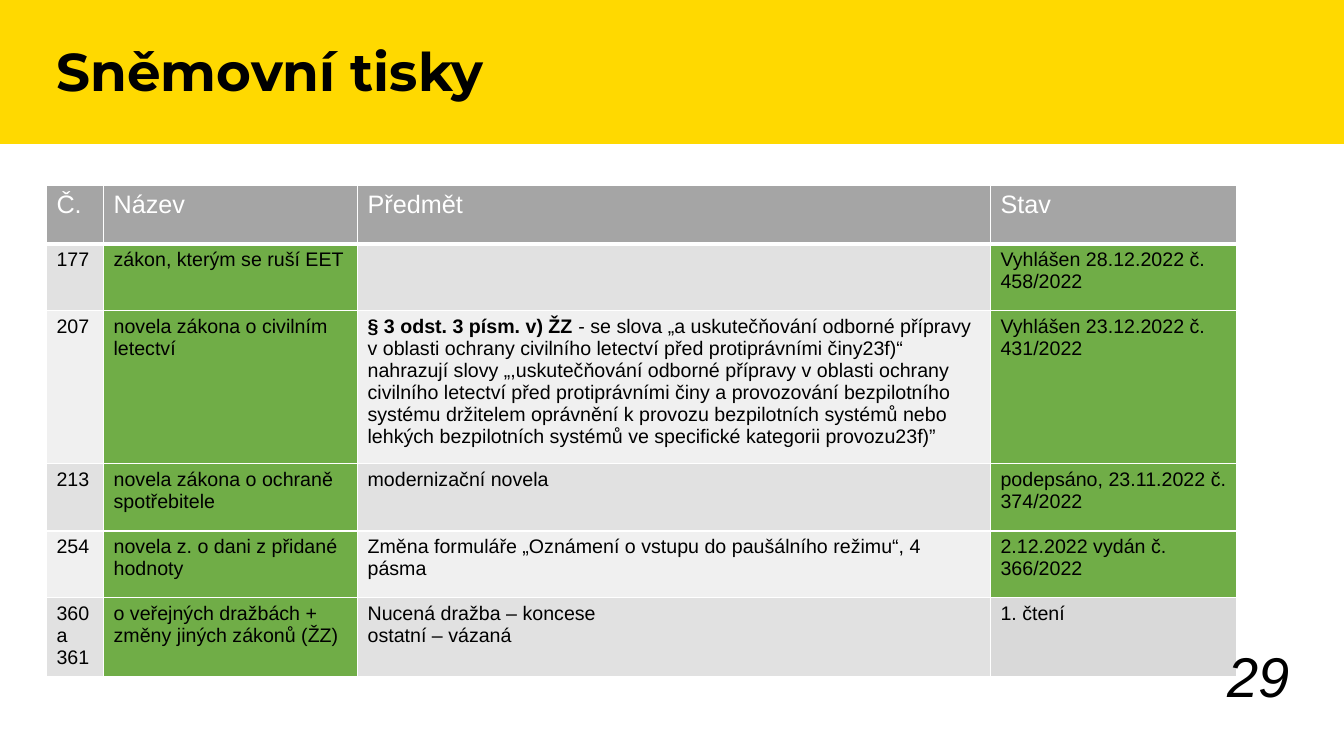
import lxml.etree
import pptx
import pptx.dml.color
import pptx.enum.shapes
import pptx.enum.text
import pptx.oxml.ns
import pptx.util
from pptx.util import Cm

ALIGN = pptx.enum.text.PP_ALIGN
ANCHOR = pptx.enum.text.MSO_ANCHOR

YELLOW, WHITE, BLACK = "FFD900", "FFFFFF", "000000"
HEADER, GREEN, GRAY = "A5A5A5", "70AD47", "D9D9D9"
BANDS = ("E1E1E1", "F0F0F0")

COLUMN_WIDTHS = (1.44, 6.4, 15.95, 6.2)
ROW_HEIGHTS = (1.47, 1.68, 3.86, 1.7, 1.68, 1.98)
# A newline starts a paragraph; text between ** is bold.
BILLS = (
    ("Č.", "Název", "Předmět", "Stav"),
    ("177", "zákon, kterým se ruší EET", "", "Vyhlášen 28.12.2022 č. 458/2022"),
    ("207", "novela zákona o civilním letectví",
     "**§ 3 odst. 3 písm. v) ŽZ **- se slova „a uskutečňování odborné přípravy "
     "v oblasti ochrany civilního letectví před protiprávními činy23f)“ "
     "nahrazují slovy „,uskutečňování odborné přípravy v oblasti ochrany "
     "civilního letectví před protiprávními činy a provozování bezpilotního "
     "systému držitelem oprávnění k provozu bezpilotních systémů nebo "
     "lehkých bezpilotních systémů ve specifické kategorii provozu23f)”",
     "Vyhlášen 23.12.2022 č. 431/2022"),
    ("213", "novela zákona o ochraně spotřebitele", "modernizační novela",
     "podepsáno, 23.11.2022 č. 374/2022"),
    ("254", "novela z. o dani z přidané hodnoty",
     "Změna formuláře „Oznámení o vstupu do paušálního režimu“, 4 pásma",
     "2.12.2022 vydán č. 366/2022"),
    ("360 a 361", "o veřejných dražbách + změny jiných zákonů (ŽZ)",
     "Nucená dražba – koncese\nostatní – vázaná", "1. čtení"),
)


def color(value):
    return pptx.dml.color.RGBColor.from_string(value)


def assign(target, values):
    for name, value in values.items():
        setattr(target, name, value)


def paint(fill, value):
    fill.solid()
    fill.fore_color.rgb = color(value)


def cell_fill(row, column):
    if row == 0:
        return HEADER
    if column == 1:
        return GREEN
    if column == 3:
        return GRAY if row == len(BILLS) - 1 else GREEN
    return BANDS[(row - 1) % 2]


class SlideBuilder:
    def __init__(self, deck, font="Arial"):
        self.font = font
        self.slide = deck.slides.add_slide(deck.slide_layouts[5])

    def set_text(self, frame, text, size, ink=BLACK, paragraph=None, **font):
        """Fill a text frame, turning **marked** parts bold."""
        for index, line in enumerate(text.split("\n")):
            para = frame.add_paragraph() if index else frame.paragraphs[0]
            assign(para, paragraph or {})
            for part, words in enumerate(line.split("**")):
                if words:
                    span = para.add_run()
                    span.text = words
                    style = {"name": self.font, "bold": part % 2 == 1,
                             "size": pptx.util.Pt(size)}
                    assign(span.font, style | font)
                    span.font.color.rgb = color(ink)

    def title(self, text, left, top, width, height):
        box = self.slide.shapes.title
        assign(box, {"left": Cm(left), "top": Cm(top),
                     "width": Cm(width), "height": Cm(height)})
        assign(box.text_frame, {"vertical_anchor": ANCHOR.TOP, "word_wrap": True,
                                "auto_size": pptx.enum.text.MSO_AUTO_SIZE.NONE})
        self.set_text(box.text_frame, text, 38, name="Montserrat", bold=True,
                      paragraph={"alignment": ALIGN.LEFT, "line_spacing": 0.9})

    def band(self, left, top, width, height, fill):
        """Draw a plain rectangle behind the title."""
        shape = self.slide.shapes.add_shape(
            pptx.enum.shapes.MSO_SHAPE.RECTANGLE,
            Cm(left), Cm(top), Cm(width), Cm(height))
        shape.shadow.inherit = False
        paint(shape.fill, fill)
        shape.line.fill.background()
        self.slide.shapes.title.element.addprevious(shape.element)

    def borders(self, cell, widths):
        properties = cell._tc.get_or_add_tcPr()
        for index, (side, points) in enumerate(widths.items()):
            line = lxml.etree.Element(pptx.oxml.ns.qn(f"a:ln{side}"),
                                      w=str(pptx.util.Pt(points)))
            solid = lxml.etree.SubElement(line, pptx.oxml.ns.qn("a:solidFill"))
            lxml.etree.SubElement(solid, pptx.oxml.ns.qn("a:srgbClr"), val=WHITE)
            properties.insert(index, line)

    def table(self, rows, left, top, widths, heights):
        table = self.slide.shapes.add_table(
            len(heights), len(widths), Cm(left), Cm(top),
            Cm(sum(widths)), Cm(sum(heights))).table
        for column, width in zip(table.columns, widths):
            column.width = Cm(width)
        for row, height in zip(table.rows, heights):
            row.height = Cm(height)
        for y, texts in enumerate(rows):
            size, ink, bottom = (14, BLACK, 1) if y else (18, WHITE, 3)
            for x, text in enumerate(texts):
                cell = table.cell(y, x)
                paint(cell.fill, cell_fill(y, x))
                self.borders(cell, {"L": 1, "R": 1, "T": 1, "B": bottom})
                self.set_text(cell.text_frame, text, size, ink)

    def page_number(self, text, left, top, width, height):
        box = self.slide.shapes.add_textbox(Cm(left), Cm(top), Cm(width), Cm(height))
        assign(box.text_frame, {"word_wrap": True, "vertical_anchor": ANCHOR.BOTTOM})
        self.set_text(box.text_frame, text, 40, italic=True,
                      paragraph={"alignment": ALIGN.RIGHT})


def main():
    deck = pptx.Presentation()
    assign(deck, {"slide_width": Cm(33.87), "slide_height": Cm(19.05)})
    page = SlideBuilder(deck)
    page.band(0, 0, 33.87, 3.63, YELLOW)
    page.title("Sněmovní tisky", 1.17, 1.02, 31.29, 2.59)
    page.table(BILLS, 1.17, 4.67, COLUMN_WIDTHS, ROW_HEIGHTS)
    page.page_number("29", 25.12, 16.54, 7.62, 1.45)
    deck.save("out.pptx")


if __name__ == "__main__":
    main()
